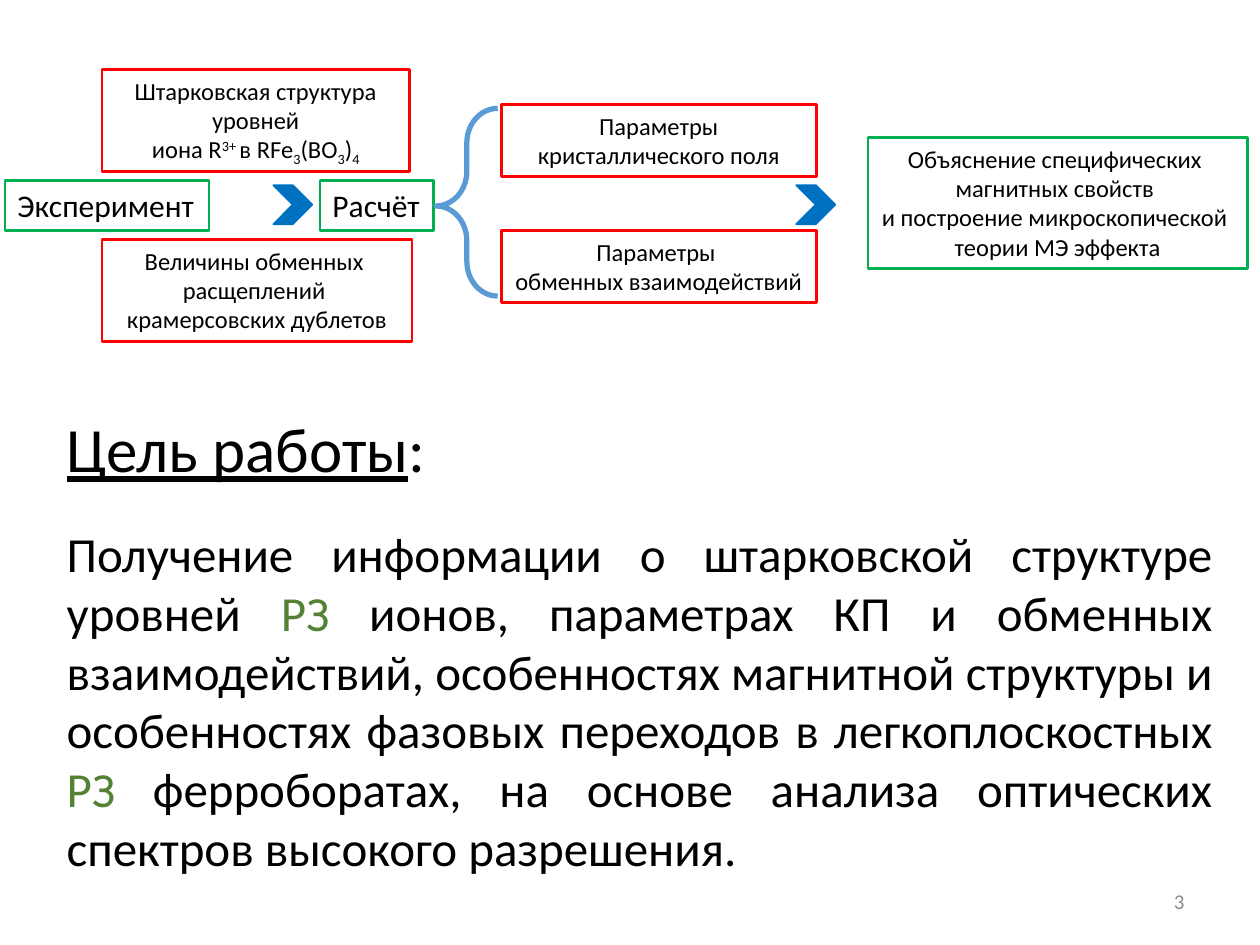
from pptx import Presentation
from pptx.dml.color import RGBColor
from pptx.enum.shapes import MSO_SHAPE as Shape
from pptx.enum.text import MSO_ANCHOR as Anchor, MSO_AUTO_SIZE as AutoSize, PP_ALIGN as Align
from pptx.util import Pt

RED, GREEN, BLUE, BRACE_BLUE = "FF0000", "00B050", "0070C0", "5B9BD5"
RARE_EARTH = {"color": "548235"}
SUPERSCRIPT, SUBSCRIPT = {"baseline": 30000}, {"baseline": -25000}


def rgb(color):
    return RGBColor.from_string(color)


def write(paragraph, *pieces, size, color="000000", align=Align.LEFT):
    """Add runs; a piece is plain text or a (text, format) pair."""
    paragraph.alignment = align
    for piece in pieces:
        text, style = (piece, {}) if isinstance(piece, str) else piece
        run = paragraph.add_run()
        run.text = text
        run.font.name = "Calibri"
        run.font.size = Pt(size)
        run.font.color.rgb = rgb(style.get("color", color))
        if style.get("underline"):
            run.font.underline = True
        if "baseline" in style:
            run.font._element.set("baseline", str(style["baseline"]))


presentation = Presentation()
presentation.slide_width, presentation.slide_height = Pt(720), Pt(540)
slide = presentation.slides.add_slide(presentation.slide_layouts[6])
shapes = slide.shapes

# Framed steps: left, top, width, height, line colour, size, wrap, lines of pieces
ion_formula = ["иона R", ("3+ ", SUPERSCRIPT), "в RFe", ("3", SUBSCRIPT),
               "(BO", ("3", SUBSCRIPT), ")", ("4", SUBSCRIPT)]
steps = [
    (58.3, 39.6, 175.7, 58.3, RED, 14, True,
     [["Штарковская структура"], ["уровней"], ion_formula]),
    (58.3, 136.8, 177.1, 58.3, RED, 14, True,
     [["Величины обменных "], ["расщеплений "], ["крамерсовских дублетов"]]),
    (286.5, 59.8, 180, 41, RED, 14, True,
     [["Параметры"], ["кристаллического поля"]]),
    (286.5, 131.8, 180, 41, RED, 14, False,
     [["Параметры "], ["обменных взаимодействий"]]),
    (496, 78.5, 216.7, 74.9, GREEN, 14, False,
     [["Объяснение специфических "], ["магнитных свойств "],
      ["и построение микроскопической "], ["теории МЭ эффекта"]]),
    (2.9, 103, 116.6, 28.8, GREEN, 18, False, [["Эксперимент"]]),
    (182.9, 103, 64.8, 28.8, GREEN, 18, False, [["Расчёт"]]),
]
for left, top, width, height, color, size, wrap, lines in steps:
    box = shapes.add_shape(Shape.RECTANGLE, Pt(left), Pt(top), Pt(width), Pt(height))
    box.shadow.inherit = False
    box.fill.background()
    box.line.color.rgb = rgb(color)
    box.line.width = Pt(1.5)
    frame = box.text_frame
    frame.word_wrap = wrap
    frame.auto_size = AutoSize.SHAPE_TO_FIT_TEXT
    frame.vertical_anchor = Anchor.TOP
    align = Align.CENTER if len(lines) > 1 else Align.LEFT
    for index, pieces in enumerate(lines):
        paragraph = frame.add_paragraph() if index else frame.paragraphs[0]
        write(paragraph, *pieces, size=size, align=align)

for left in (156.2, 455):
    chevron = shapes.add_shape(Shape.CHEVRON, Pt(left), Pt(105.8), Pt(22.3), Pt(22.3))
    chevron.shadow.inherit = False
    chevron.fill.solid()
    chevron.fill.fore_color.rgb = rgb(BLUE)
    chevron.line.color.rgb = rgb(BLUE)
    chevron.line.width = Pt(1)

brace = shapes.add_shape(Shape.LEFT_BRACE, Pt(249.1), Pt(61.9), Pt(35.3), Pt(107.3))
brace.adjustments[0], brace.adjustments[1] = 0.56, 0.52
brace.shadow.inherit = False
brace.fill.background()
brace.line.color.rgb = rgb(BRACE_BLUE)
brace.line.width = Pt(3)

goal = shapes.add_textbox(Pt(31), Pt(230.4), Pt(668.9), Pt(276.5)).text_frame
goal.word_wrap = True
goal.auto_size = AutoSize.SHAPE_TO_FIT_TEXT
write(goal.paragraphs[0], ("Цель работы", {"underline": True}), ":", size=36)
statement = goal.add_paragraph()
statement.space_before = Pt(22)
write(statement,
      "Получение информации о штарковской структуре уровней ",
      ("РЗ", RARE_EARTH),
      " ионов, параметрах КП и обменных взаимодействий, особенностях магнитной "
      "структуры и особенностях фазовых переходов в легкоплоскостных ",
      ("РЗ", RARE_EARTH),
      " ферроборатах, на основе анализа оптических спектров высокого разрешения.",
      size=28, align=Align.JUSTIFY)

page_number = shapes.add_textbox(Pt(516.2), Pt(500.4), Pt(167.8), Pt(28.8)).text_frame
page_number.word_wrap = True
page_number.vertical_anchor = Anchor.MIDDLE
write(page_number.paragraphs[0], "3", size=12, color="8C8C8C", align=Align.RIGHT)

presentation.save("out.pptx")
